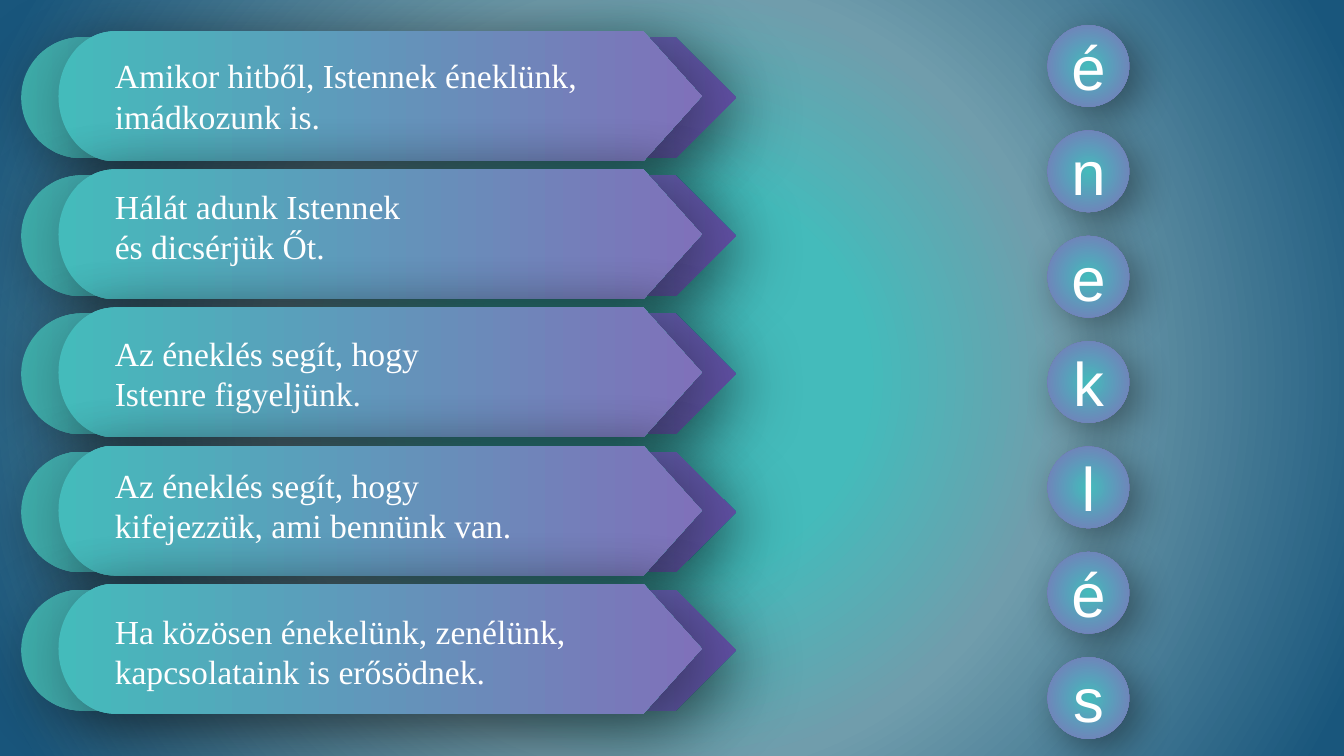
import math

import lxml.etree
import pptx
import pptx.dml.color
import pptx.enum.shapes
import pptx.enum.text
import pptx.oxml.ns
import pptx.util

WIDE, HIGH = 13.33, 7.5
ROW, STEP = 1.37, 1.045
DISC = 0.81
WORD = "éneklés"
TEAL, PLUM = "44BBBB", "7F71BA"
BACK = [(0, "3EACA9"), (100, "6151A5")]
FRONT = [(0, TEAL), (100, PLUM)]
LINES = [
    ("Amikor hitből, Istennek éneklünk,\vimádkozunk is.", 0.5, 5.14),
    ("Hálát adunk Istennek\vés dicsérjük Őt.", 1.79, 6.01),
    ("Az éneklés segít, hogy\vIstenre figyeljünk.", 3.25, 3.59),
    ("Az éneklés segít, hogy\vkifejezzük, ami bennünk van.", 4.56, 4.53),
    ("Ha közösen énekelünk, zenélünk,\nkapcsolataink is erősödnek.", 6.01, 4.77),
]


def inch(*sizes):
    return [pptx.util.Inches(size) for size in sizes]


def color(code):
    return pptx.dml.color.RGBColor.from_string(code)


def add(node, tag, **keys):
    return lxml.etree.SubElement(
        node, pptx.oxml.ns.qn(tag), {key: str(val) for key, val in keys.items()})


def blend(fill, node, stops, round=False):
    fill.gradient()
    grad = node.xpath(".//a:gradFill")[0]
    for child in list(grad):
        grad.remove(child)
    chain = add(grad, "a:gsLst")
    for place, code in stops:
        add(add(chain, "a:gs", pos=place * 1000), "a:srgbClr", val=code)
    if round:
        add(add(grad, "a:path", path="circle"), "a:fillToRect",
            l=50000, t=50000, r=50000, b=50000)
    else:
        add(grad, "a:lin", ang=0, scaled=0)


def style(shape, stops, blur, dist, round=False):
    blend(shape.fill, shape.element, stops, round)
    shape.line.fill.background()
    shape.shadow.inherit = False
    glow = add(shape.element.xpath(".//a:effectLst")[0], "a:outerShdw",
               blurRad=pptx.util.Pt(blur), dist=pptx.util.Pt(dist),
               dir=45 * 60000, algn="tl", rotWithShape=0)
    add(add(glow, "a:srgbClr", val="000000"), "a:alpha", val=40000)


def write(frame, text, font, size, align=None):
    frame.text = text
    for para in frame.paragraphs:
        para.alignment = align
        for run in para.runs:
            run.font.name = font
            run.font.size = pptx.util.Pt(size)
            run.font.color.rgb = color("FFFFFF")


def arrow(group, left, top, wide, high, head, bend, stops):
    mid = top + high / 2
    spots = [(left + wide - head, top), (left + wide, mid),
             (left + wide - head, top + high)]
    for turn in range(90, 271, 5):
        angle = math.radians(turn)
        spots.append((left + bend + bend * math.cos(angle),
                      mid + high / 2 * math.sin(angle)))
    spots = [inch(*spot) for spot in spots]
    form = group.shapes.build_freeform(*spots[0])
    form.add_line_segments(spots[1:], close=True)
    style(form.convert_to_shape(), stops, 50, 13)


def label(group, text, top, wide):
    box = group.shapes.add_textbox(*inch(1.04, top, wide, 0.91))
    frame = box.text_frame
    frame.word_wrap = True
    frame.auto_size = pptx.enum.text.MSO_AUTO_SIZE.SHAPE_TO_FIT_TEXT
    write(frame, text, "Times New Roman", 24)


def disc(slide, top, text):
    ball = slide.shapes.add_shape(pptx.enum.shapes.MSO_SHAPE.OVAL,
                                  *inch(10.39, top, DISC, DISC))
    style(ball, FRONT, 28, 10, round=True)
    ball.text_frame.vertical_anchor = pptx.enum.text.MSO_ANCHOR.MIDDLE
    write(ball.text_frame, text, "Arial", 44, pptx.enum.text.PP_ALIGN.CENTER)


def main():
    deck = pptx.Presentation()
    deck.slide_width, deck.slide_height = inch(WIDE, HIGH)
    slide = deck.slides.add_slide(deck.slide_layouts[6])
    blend(slide.background.fill, slide.element,
          [(25, TEAL), (51, "709DAC"), (97, "19567C")], round=True)
    for row, (text, top, wide) in enumerate(LINES):
        group = slide.shapes.add_group_shape()
        arrow(group, 0.21, 0.37 + row * ROW, 7.09, 1.2, 0.6, 0.6, BACK)
        arrow(group, 0.58, 0.31 + row * ROW, 6.38, 1.29, 0.58, 0.56, FRONT)
        label(group, text, top, wide)
    for row, char in enumerate(WORD):
        disc(slide, 0.25 + row * STEP, char)
    deck.save("out.pptx")


if __name__ == "__main__":
    main()
